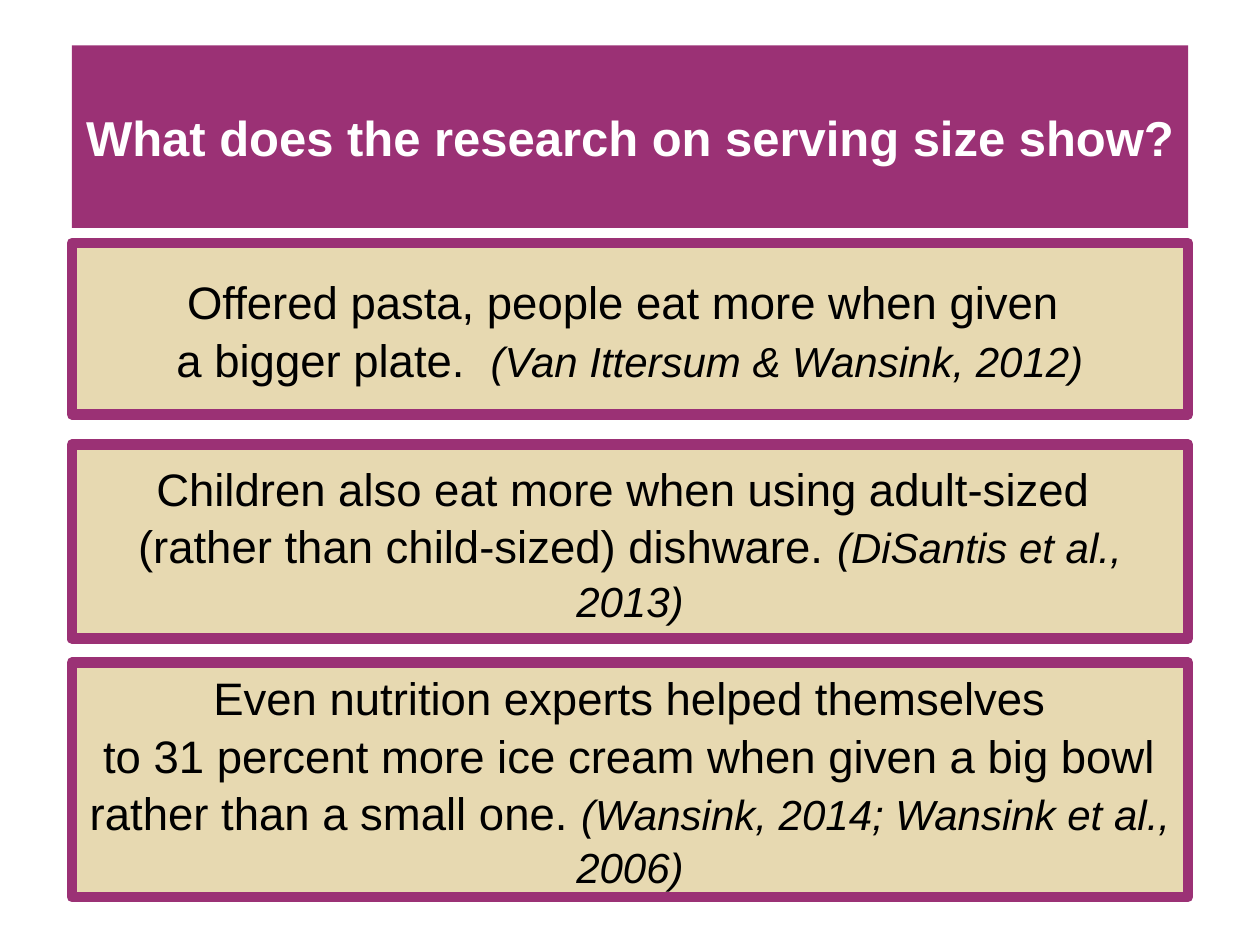
"""Build a slide on what research shows about serving size."""
from pptx import Presentation
from pptx.dml.color import RGBColor
from pptx.enum.shapes import MSO_SHAPE
from pptx.enum.text import MSO_ANCHOR, MSO_AUTO_SIZE, PP_ALIGN
from pptx.util import Inches, Pt

COLORS = {"plum": "9B3175", "sand": "E7D9B1", "white": "FFFFFF", "black": "000000"}
LEFT, WIDTH = Inches(0.57), Inches(8.86)
FRAME = {"word_wrap": True, "auto_size": MSO_AUTO_SIZE.NONE,
         "vertical_anchor": MSO_ANCHOR.MIDDLE}
CLAIM = {"name": "Arial", "size": Pt(26), "italic": False}
CITATION = {"name": "Arial", "size": Pt(24), "italic": True}
HEADING = {"name": "Arial", "size": Pt(28), "bold": True}

FINDINGS = [
    (1.93, 1.36, "Offered pasta, people eat more when given ",
     "a bigger plate.  ", "(Van Ittersum & Wansink, 2012)"),
    (3.53, 1.54, "Children also eat more when using adult-sized ",
     "(rather than child-sized) dishware. ", "(DiSantis et al., 2013)"),
    (5.26, 1.86, "Even nutrition experts helped themselves",
     "to 31 percent more ice cream when given a big bowl rather than a small one. ",
     "(Wansink, 2014; Wansink et al., 2006)"),
]


def rgb(name):
    return RGBColor.from_string(COLORS[name])


def add_text(paragraph, text, style, color):
    paragraph.alignment = PP_ALIGN.CENTER
    run = paragraph.add_run()
    run.text = text
    for key, value in style.items():
        setattr(run.font, key, value)
    run.font.color.rgb = rgb(color)


prs = Presentation()
prs.slide_width, prs.slide_height = Inches(10), Inches(7.5)
slide = prs.slides.add_slide(prs.slide_layouts[5])

question = slide.shapes.title
question.left, question.top = LEFT, Inches(0.36)
question.width, question.height = WIDTH, Inches(1.45)
question.fill.solid()
question.fill.fore_color.rgb = rgb("plum")
for key, value in FRAME.items():
    setattr(question.text_frame, key, value)
add_text(question.text_frame.paragraphs[0],
         "What does the research on serving size show?", HEADING, "white")

for top, height, opening, rest, source in FINDINGS:
    finding = slide.shapes.add_shape(
        MSO_SHAPE.RECTANGLE, LEFT, Inches(top), WIDTH, Inches(height))
    finding.shadow.inherit = False
    finding.fill.solid()
    finding.fill.fore_color.rgb = rgb("sand")
    finding.line.color.rgb = rgb("plum")
    finding.line.width = Pt(6)
    body = finding.text_frame
    for key, value in FRAME.items():
        setattr(body, key, value)
    first, second = body.paragraphs[0], body.add_paragraph()
    first.line_spacing = second.line_spacing = 1.05
    add_text(first, opening, CLAIM, "black")
    add_text(second, rest, CLAIM, "black")
    add_text(second, source, CITATION, "black")

prs.save("out.pptx")
